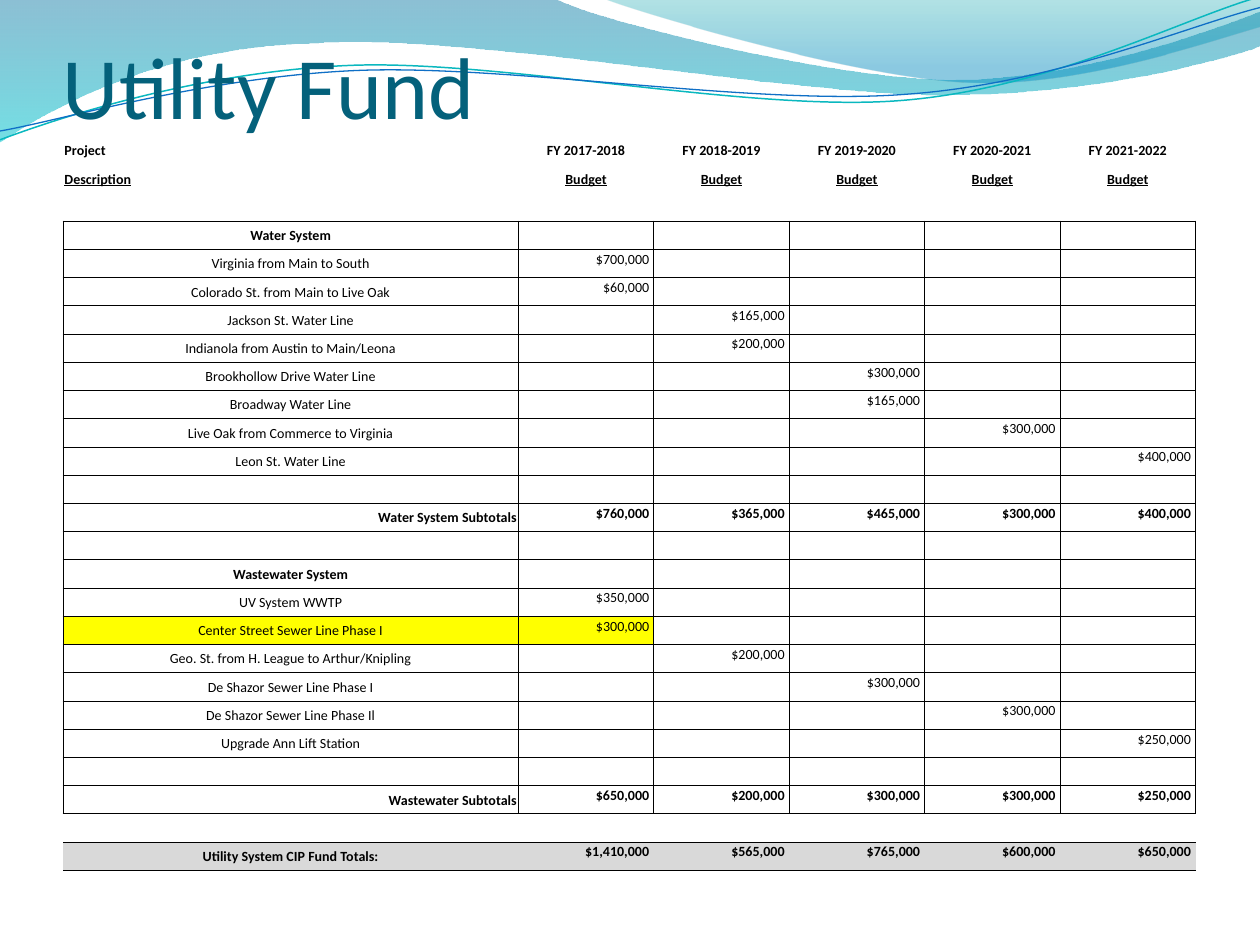
import dataclasses

import lxml.etree
import pptx
import pptx.dml.color
import pptx.enum.text
import pptx.oxml.ns
import pptx.util

Cm = pptx.util.Cm
Align = pptx.enum.text.PP_ALIGN
Anchor = pptx.enum.text.MSO_ANCHOR
qn = pptx.oxml.ns.qn


@dataclasses.dataclass(frozen=True)
class Theme:
    font: str = "Calibri"
    title_size: float = 50
    body_size: float = 8
    rule_width: float = 0.5
    title: str = "04617B"
    ink: str = "000000"
    paper: str = "FFFFFF"
    highlight: str = "FFFF00"
    total: str = "D9D9D9"
    teal_line: str = "0AB8BF"
    blue_line: str = "0F6FC6"
    wide_wave: tuple = ((0, "0074A1", 45), (1, "00C6CF", 55))
    corner_wave: tuple = ((0, "00A1A9", 30), (0.8, "008BBF", 45))


THEME = Theme()
YEARS = ["2017-2018", "2018-2019", "2019-2020", "2020-2021", "2021-2022"]
SYSTEMS = [
    ("Water System", "Water System Subtotals", [
        ("Virginia from Main to South", 0, 700000),
        ("Colorado St. from Main to Live Oak", 0, 60000),
        ("Jackson St. Water Line", 1, 165000),
        ("Indianola from Austin to Main/Leona", 1, 200000),
        ("Brookhollow Drive Water Line", 2, 300000),
        ("Broadway Water Line", 2, 165000),
        ("Live Oak from Commerce to Virginia", 3, 300000),
        ("Leon St. Water Line", 4, 400000),
    ]),
    ("Wastewater System", "Wastewater Subtotals", [
        ("UV System WWTP", 0, 350000),
        ("Center Street Sewer Line Phase I", 0, 300000),
        ("Geo. St. from H. League to Arthur/Knipling", 1, 200000),
        ("De Shazor Sewer Line Phase I", 2, 300000),
        ("De Shazor Sewer Line Phase Il", 3, 300000),
        ("Upgrade Ann Lift Station", 4, 250000),
    ]),
]
HIGHLIGHTED = "Center Street Sewer Line Phase I"

WIDE_WAVE = [(0, 0), (4.4, -0.01), (4.76, 0.17, 6.64, 0.63, 7.58, 0.63),
             (8.53, 0.63, 9.58, 0.26, 10, 0.09), (10.01, 0.36),
             (9.83, 0.44, 8.7, 0.76, 7.46, 0.75), (6.22, 0.75, 3.82, 0.28, 2.57, 0.34),
             (1.29, 0.36, 0.46, 0.83, -0.01, 1.13)]
CORNER_WAVE = [(4.79, -0.01), (5.09, 0.11, 6.82, 0.62, 7.69, 0.65),
               (8.56, 0.69, 9.61, 0.32, 10, 0.21), (10, 0)]
TEAL_CURVE = [(0, 1.11), (0.48, 0.93, 1.58, 0.57, 2.77, 0.52),
              (3.95, 0.47, 5.93, 0.89, 7.13, 0.8), (8.33, 0.71, 9.38, 0.15, 9.98, -0.02)]
BLUE_CURVE = [(0, 1.04), (0.47, 0.96, 1.64, 0.61, 2.83, 0.56),
              (4.03, 0.51, 5.97, 0.84, 7.17, 0.75), (8.36, 0.67, 9.41, 0.21, 10, 0.06)]


def rgb(value):
    return pptx.dml.color.RGBColor.from_string(value)


def add_outline(slide, outline, close):
    segments = [[Cm(inches * 2.54) for inches in segment] for segment in outline]
    builder = slide.shapes.build_freeform(*segments[0])
    builder.add_line_segments([segment[-2:] for segment in segments[1:]], close=close)
    shape = builder.convert_to_shape()
    shape.shadow.inherit = False
    straight = shape._element.spPr.findall(".//" + qn("a:lnTo"))
    for line, segment in zip(straight, segments[1:]):
        if len(segment) == 6:
            bend = lxml.etree.Element(qn("a:cubicBezTo"))
            for x, y in zip(segment[::2], segment[1::2]):
                lxml.etree.SubElement(bend, qn("a:pt"), x=str(x - shape.left),
                                      y=str(y - shape.top))
            line.getparent().replace(line, bend)
    return shape


def add_wave(slide, outline, stops):
    wave = add_outline(slide, outline, True)
    wave.fill.gradient()
    wave.fill.gradient_angle = 270
    for stop, (position, color, _) in zip(wave.fill.gradient_stops, stops):
        stop.position = position
        stop.color.rgb = rgb(color)
    colors = wave._element.spPr.findall(".//" + qn("a:srgbClr"))
    for color, (_, _, opacity) in zip(colors, stops):
        lxml.etree.SubElement(color, qn("a:alpha"), val=str(opacity * 1000))
    wave.line.fill.background()


def add_curve(slide, outline, color, width):
    curve = add_outline(slide, outline, False)
    curve.fill.background()
    curve.line.color.rgb = rgb(color)
    curve.line.width = pptx.util.Pt(width)


def write(frame, text, size=THEME.body_size, color=THEME.ink, bold=False,
          underline=False, align=Align.LEFT):
    paragraph = frame.paragraphs[0]
    paragraph.alignment = align
    if not text:
        paragraph._p.get_or_add_endParaRPr().set("sz", str(int(size * 100)))
        return
    run = paragraph.add_run()
    run.text = text
    run.font.name = THEME.font
    run.font.size = pptx.util.Pt(size)
    run.font.color.rgb = rgb(color)
    run.font.bold = bold
    run.font.underline = underline


def set_borders(cell, sides):
    properties = cell._tc.get_or_add_tcPr()
    for index, side in enumerate("LRTB"):
        border = lxml.etree.Element(qn("a:ln" + side), w=str(int(THEME.rule_width * 12700)))
        if side in sides:
            paint = lxml.etree.SubElement(border, qn("a:solidFill"))
            lxml.etree.SubElement(paint, qn("a:srgbClr"), val=THEME.ink)
        else:
            lxml.etree.SubElement(border, qn("a:noFill"))
        properties.insert(index, border)


def fill_cell(cell, text, fill=None, borders="", anchor=Anchor.BOTTOM, right=0.03, **style):
    cell.margin_left = cell.margin_top = Cm(0.03)
    cell.margin_right, cell.margin_bottom = Cm(right), Cm(0.1)
    cell.vertical_anchor = anchor
    write(cell.text_frame, text, **style)
    if fill:
        cell.fill.solid()
        cell.fill.fore_color.rgb = rgb(fill)
    else:
        cell.fill.background()
    set_borders(cell, borders)


def budget_rows():
    blank = ("", [""] * len(YEARS))
    yield "header", "Project", ["FY " + year for year in YEARS]
    yield "subheader", "Description", ["Budget"] * len(YEARS)
    yield "lead", *blank
    grand = [0] * len(YEARS)
    for index, (system, subtotal_label, projects) in enumerate(SYSTEMS):
        if index:
            yield "project", *blank
        yield "system", system, blank[1]
        for project, year, amount in projects:
            amounts = [f"${amount:,}" if y == year else "" for y in range(len(YEARS))]
            yield "project", project, amounts
        yield "project", *blank
        sums = [sum(p[2] for p in projects if p[1] == y) for y in range(len(YEARS))]
        grand = [a + b for a, b in zip(grand, sums)]
        yield "subtotal", subtotal_label, [f"${s:,}" for s in sums]
    yield "gap", *blank
    yield "total", "Utility System CIP Fund Totals:", [f"${s:,}" for s in grand]


def add_budget(slide):
    rows = list(budget_rows())
    height = Cm(0.57)
    budget = slide.shapes.add_table(len(rows), len(YEARS) + 1, Cm(1.27), Cm(2.75),
                                    Cm(22.83), height * len(rows)).table
    budget.first_row = budget.horz_banding = False
    for index, column in enumerate(budget.columns):
        column.width = Cm(2.73 if index else 9.18)
    edges = {"header": "", "subheader": "", "lead": "B", "gap": "TB", "total": "TB"}
    for r, (kind, label, amounts) in enumerate(rows):
        budget.rows[r].height = height
        heading = kind in ("header", "subheader")
        fill = THEME.total if kind == "total" else None if kind in edges else THEME.paper
        look = dict(borders=edges.get(kind, "LRTB"), bold=kind != "project",
                    underline=kind == "subheader")
        label_align = (Align.LEFT if heading else
                       Align.RIGHT if kind == "subtotal" else Align.CENTER)
        marked = label == HIGHLIGHTED
        fill_cell(budget.cell(r, 0), label, fill=THEME.highlight if marked else fill,
                  align=label_align, **look)
        place = (dict(align=Align.CENTER) if heading else
                 dict(align=Align.RIGHT, anchor=Anchor.TOP, right=0.09))
        for c, amount in enumerate(amounts, 1):
            fill_cell(budget.cell(r, c), amount,
                      fill=THEME.highlight if marked and amount else fill, **place, **look)


def add_title(slide, text):
    frame = slide.shapes.add_textbox(Cm(1.27), Cm(0.42), Cm(22.86), Cm(2.34)).text_frame
    frame.word_wrap = True
    frame.vertical_anchor = Anchor.BOTTOM
    frame.margin_left = frame.margin_right = frame.margin_bottom = 0
    write(frame, text, size=THEME.title_size, color=THEME.title)


def main():
    deck = pptx.Presentation()
    deck.slide_width, deck.slide_height = Cm(25.4), Cm(19.05)
    slide = deck.slides.add_slide(deck.slide_layouts[6])
    add_wave(slide, WIDE_WAVE, THEME.wide_wave)
    add_wave(slide, CORNER_WAVE, THEME.corner_wave)
    add_curve(slide, TEAL_CURVE, THEME.teal_line, 0.85)
    add_curve(slide, BLUE_CURVE, THEME.blue_line, 0.75)
    add_title(slide, "Utility Fund")
    add_budget(slide)
    deck.save("out.pptx")


if __name__ == "__main__":
    main()
